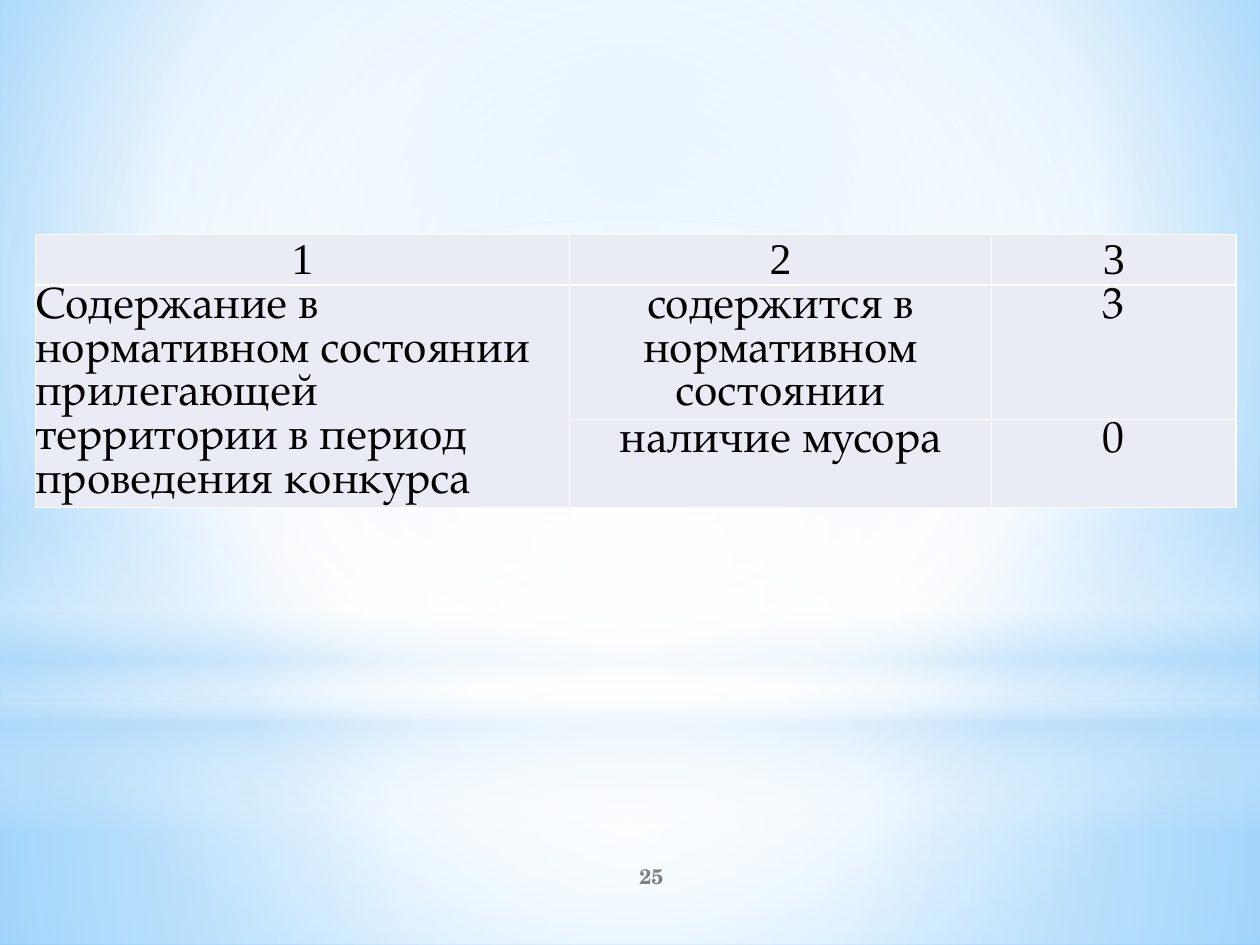
from lxml.etree import SubElement
from pptx import Presentation
from pptx.dml.color import RGBColor
from pptx.enum.shapes import MSO_SHAPE
from pptx.enum.text import MSO_ANCHOR, PP_ALIGN
from pptx.oxml.ns import qn
from pptx.util import Inches, Pt

WHITE = RGBColor(0xFF, 0xFF, 0xFF)
BLACK = RGBColor(0, 0, 0)
GRAY = RGBColor(0x80, 0x80, 0x80)
SKY = RGBColor(0x9E, 0xD5, 0xFF)
BLUE = RGBColor(0x5B, 0xB9, 0xFF)
PALE_BLUE = RGBColor(0xB4, 0xDC, 0xFA)
LAVENDER = RGBColor(0xE9, 0xEB, 0xF5)
CENTER = (50, 50, 50, 50)


def paint_gradient(fill, owner, stops, focus=None):
    fill.gradient()
    gradient = owner.xpath(".//a:gradFill")[0]
    for child in list(gradient):
        gradient.remove(child)
    stop_list = SubElement(gradient, qn("a:gsLst"))
    for position, color, opacity in stops:
        stop = SubElement(stop_list, qn("a:gs"), pos=str(position * 1000))
        tint = SubElement(stop, qn("a:srgbClr"), val=str(color))
        if opacity < 100:
            SubElement(tint, qn("a:alpha"), val=str(opacity * 1000))
    if focus:
        circle = SubElement(gradient, qn("a:path"))
        circle.set("path", "circle")
        sides = {side: str(share * 1000) for side, share in zip("ltrb", focus)}
        SubElement(circle, qn("a:fillToRect"), **sides)
    else:
        SubElement(gradient, qn("a:lin"), ang="5400000", scaled="0")


def write_text(frame, text, font, size, color=BLACK, bold=False, align=PP_ALIGN.CENTER):
    frame.word_wrap = True
    para = frame.paragraphs[0]
    para.alignment = align
    span = para.add_run()
    span.text = text
    span.font.name = font
    span.font.size = Pt(size)
    span.font.bold = bold
    span.font.color.rgb = color


deck = Presentation()
deck.slide_width, deck.slide_height = Inches(10), Inches(7.5)
page = deck.slides.add_slide(deck.slide_layouts[6])
paint_gradient(page.background.fill, page.element,
               [(0, SKY, 100), (60, WHITE, 100), (100, BLUE, 100)], (20, 10, 20, 60))

glows = [
    (MSO_SHAPE.RECTANGLE, 5.58, 1.92,
     [(0, WHITE, 91), (37, WHITE, 76), (100, PALE_BLUE, 79)], CENTER),
    (MSO_SHAPE.RECTANGLE, 0, 5.58,
     [(0, WHITE, 89), (48, WHITE, 62), (100, PALE_BLUE, 79)], CENTER),
    (MSO_SHAPE.RECTANGLE, 4.12, 2.5,
     [(0, WHITE, 0), (29, WHITE, 30), (45, PALE_BLUE, 40),
      (55, WHITE, 26), (65, PALE_BLUE, 60), (100, WHITE, 0)], None),
    (MSO_SHAPE.OVAL, 1.75, 5.58, [(0, WHITE, 100), (56, WHITE, 0)], CENTER),
]
for kind, top, height, stops, focus in glows:
    glow = page.shapes.add_shape(kind, 0, Inches(top), deck.slide_width, Inches(height))
    glow.shadow.inherit = False
    glow.line.fill.background()
    paint_gradient(glow.fill, glow.element, stops, focus)

column_widths = [4.24, 3.35, 1.94]
row_heights = [0.39, 1.06, 0.7]
rows = [
    ["1", "2", "3"],
    ["Содержание в нормативном состоянии прилегающей территории в период проведения конкурса",
     "содержится в нормативном состоянии", "3"],
    ["", "наличие мусора", "0"],
]
table = page.shapes.add_table(3, 3, Inches(0.28), Inches(1.86), Inches(sum(column_widths)),
                              Inches(sum(row_heights))).table
for column, width in zip(table.columns, column_widths):
    column.width = Inches(width)
for row, height in zip(table.rows, row_heights):
    row.height = Inches(height)
table.cell(1, 0).merge(table.cell(2, 0))

for r, texts in enumerate(rows):
    for c, text in enumerate(texts):
        cell = table.cell(r, c)
        cell.margin_left = cell.margin_right = 0
        cell.margin_top = cell.margin_bottom = Inches(0.01)
        properties = cell._tc.get_or_add_tcPr()
        for side in ("lnL", "lnR", "lnT", "lnB"):
            border = SubElement(properties, qn(f"a:{side}"), w=str(Pt(1)))
            border_fill = SubElement(border, qn("a:solidFill"))
            SubElement(border_fill, qn("a:srgbClr"), val=str(WHITE))
        cell.fill.solid()
        cell.fill.fore_color.rgb = LAVENDER
        if text:
            write_text(cell.text_frame, text, size=25,
                       font="TeX Gyre Pagella" if r else "Times New Roman",
                       align=PP_ALIGN.LEFT if r and c == 0 else PP_ALIGN.CENTER)

number_box = page.shapes.add_textbox(Inches(4.17), Inches(6.75), Inches(2), Inches(0.4))
number_box.text_frame.vertical_anchor = MSO_ANCHOR.MIDDLE
write_text(number_box.text_frame, "25", font="TeX Gyre Schola", size=12, color=GRAY, bold=True)

deck.save("out.pptx")
